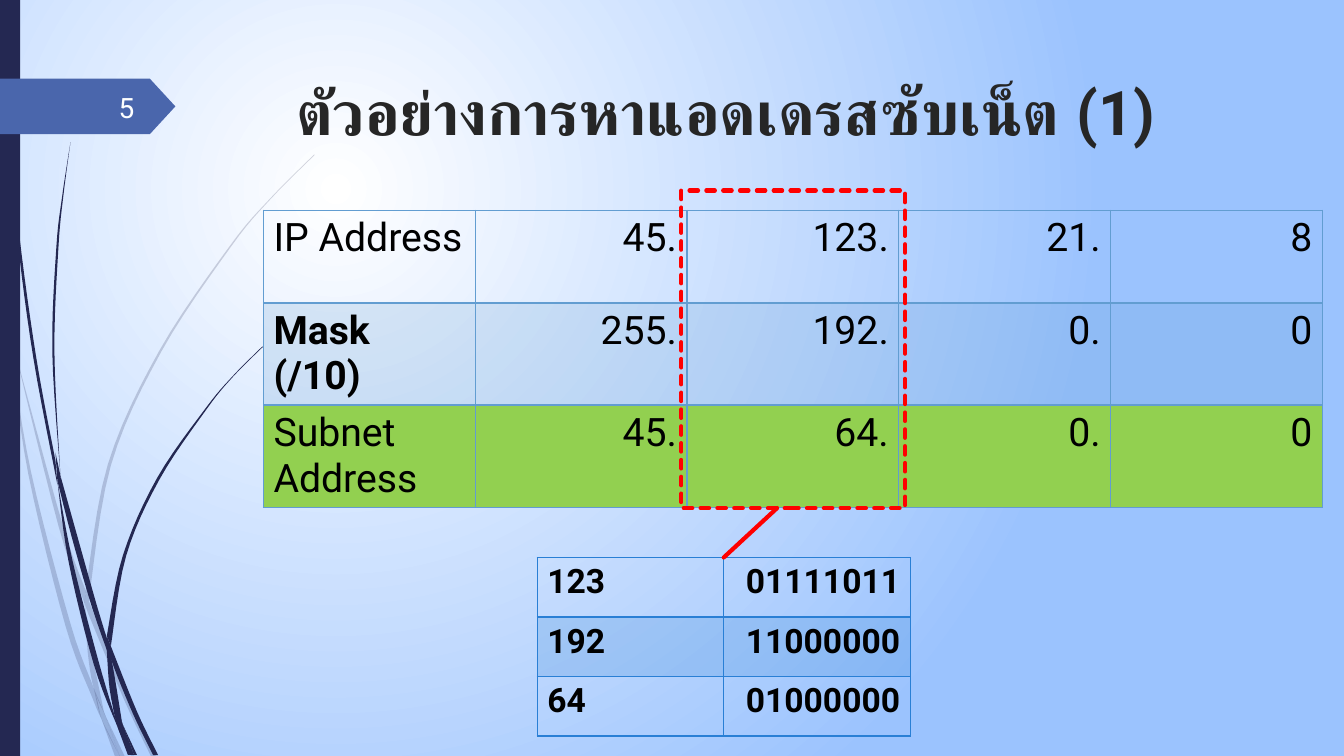
from lxml import etree
from pptx import Presentation
from pptx.dml.color import RGBColor
from pptx.enum.dml import MSO_LINE
from pptx.enum.shapes import MSO_CONNECTOR, MSO_SHAPE
from pptx.enum.text import MSO_ANCHOR, PP_ALIGN
from pptx.oxml.ns import qn
from pptx.util import Pt

RECTANGLE, PENTAGON = MSO_SHAPE.RECTANGLE, MSO_SHAPE.PENTAGON
STRAIGHT, SHORT_DASH = MSO_CONNECTOR.STRAIGHT, MSO_LINE.SQUARE_DOT
LEFT, RIGHT = PP_ALIGN.LEFT, PP_ALIGN.RIGHT
TOP, MIDDLE = MSO_ANCHOR.TOP, MSO_ANCHOR.MIDDLE

FONT = "Roboto"
WHITE = RGBColor(0xFF, 0xFF, 0xFF)
SKY = RGBColor(0x9B, 0xC3, 0xFE)
NAVY = RGBColor(0x24, 0x28, 0x52)
TAG_BLUE = RGBColor(0x4A, 0x66, 0xAC)
TITLE_GREY = RGBColor(0x26, 0x26, 0x26)
NUMBER_WHITE = RGBColor(0xFE, 0xFF, 0xFF)
BLACK = RGBColor(0x00, 0x00, 0x00)
LIGHT_BLUE = RGBColor(0x62, 0x9D, 0xD1)
MID_BLUE = RGBColor(0x29, 0x7F, 0xD5)
GREEN = RGBColor(0x92, 0xD0, 0x50)
RED = RGBColor(0xFF, 0x00, 0x00)


def paint(fill, holder, color, opacity):
    fill.solid()
    fill.fore_color.rgb = color
    if opacity < 100:
        tone = holder.find(qn("a:solidFill"))[0]
        etree.SubElement(tone, qn("a:alpha")).set("val", str(opacity * 1000))


def smooth(points, steps=6):
    padded = [points[0], *points, points[-1]]
    curve = []
    for a, b, c, d in zip(padded, padded[1:], padded[2:], padded[3:]):
        for step in range(steps):
            t = step / steps
            curve.append(tuple(
                Pt(q + t * (r - p) / 2 + t**2 * (2 * p - 5 * q + 4 * r - s) / 2
                   + t**3 * (3 * q - p - 3 * r + s) / 2)
                for p, q, r, s in zip(a, b, c, d)))
    return curve + [(Pt(points[-1][0]), Pt(points[-1][1]))]


deck = Presentation()
deck.slide_width, deck.slide_height = Pt(960), Pt(540)
page = deck.slides.add_slide(deck.slide_layouts[6])
shapes = page.shapes

backdrop = page.background.fill
backdrop.gradient()
for stop, color, position in zip(backdrop.gradient_stops, (WHITE, SKY), (0, 1)):
    stop.color.rgb = color
    stop.position = position
gradient = page.background._cSld.find(".//" + qn("a:gradFill"))
gradient.remove(gradient.find(qn("a:lin")))
glow = etree.Element(qn("a:path"), path="circle")
etree.SubElement(glow, qn("a:fillToRect"), l="50000", t="50000", r="100000", b="100000")
gradient.find(qn("a:gsLst")).addnext(glow)

PALE_BLADES = [
    ([(7.9, 252), (6.5, 231.8), (0, 203)], [(0, 215.3), (7.9, 252)]),
    ([(10.1, 248.4), (41.8, 375.8), (60.5, 431.3)],
     [(61.2, 421.9), (44.6, 374.4), (10.1, 248.4)]),
    ([(63.4, 439.2), (88.6, 499.7), (107.7, 540)],
     [(111.3, 540), (91.4, 498.2), (63.4, 429.1)]),
    ([(85.4, 540), (75.6, 511.9)], [(89, 540)]),
    ([(7.9, 252), (20.2, 338.4), (46.8, 447.1), (66.2, 499), (72.7, 514.1)],
     [(71.3, 509), (67, 491.8), (50.4, 445.7), (22.3, 337.7), (7.9, 252)]),
    ([(60.5, 431.3), (62.6, 465.1), (67, 491.8), (75.6, 511.9)],
     [(74.2, 508.3), (65.5, 465.1), (60.5, 431.3)]),
    ([(224.6, 110.2), (193, 141.8), (164.2, 175.7), (113.8, 250.6), (77, 331.9), (61.2, 421.9)],
     [(63.4, 429.1), (79.2, 332.6), (115.2, 251.3), (164.9, 176.4), (193, 142.6),
      (224.6, 110.9)]),
    ([(72.7, 514.1), (82, 540)], [(85.4, 540), (72.7, 514.1)]),
    ([(63.4, 439.2), (63.4, 429.1)], [(61.2, 421.9), (60.5, 431.3)]),
    ([(67, 491.8), (72.7, 514.1), (85.4, 540)], [(75.6, 511.9), (67, 491.8)]),
]
DARK_BLADES = [
    ([(2.2, 0), (2.9, 34.6), (5, 79.2), (12.2, 167.8), (23.8, 255.6), (41, 346.3)],
     [(39.6, 329), (25.9, 255.6), (13.7, 167), (5.8, 78.5), (3.6, 34.6), (2.9, 0)]),
    ([(43.2, 339.8), (46.1, 363.6), (63.4, 426.2), (76.3, 464.4)],
     [(76.3, 455.8), (67, 424.8), (43.2, 339.8)]),
    ([(79.2, 461.5), (79.9, 472.3), (95, 509.8), (109.4, 539.3)],
     [(113, 539.3), (97.9, 508.3), (79.2, 461.5)]),
    ([(41, 343.4), (49, 401), (67, 474.5), (84.2, 519.8)],
     [(83.5, 516.2), (70.6, 473), (51.8, 400.3), (41, 343.4)]),
    ([(50.4, 101.5), (44.6, 139), (40.3, 176.4), (37.4, 251.3), (43.2, 339.8)],
     [(43.2, 339.8), (38.9, 251.3), (41.8, 176.4), (45.4, 139), (50.4, 101.5)]),
    ([(95.8, 539.3), (87.8, 517.7)], [(97.9, 539.3)]),
    ([(41, 343.4), (46.1, 363.6)], [(43.2, 339.8), (39.6, 323.3)]),
    ([(187.2, 247.7), (166.3, 268.6), (146.9, 291.6), (112.3, 341.3), (87.8, 396.7),
      (76.3, 454.3)],
     [(79.2, 461.5), (90, 397.4), (113.8, 342.7), (147.6, 292.3), (166.3, 269.3),
      (187.9, 247.7)]),
    ([(84.2, 519.8), (91.4, 539.3)], [(94.3, 539.3), (84.2, 519.8)]),
    ([(76.3, 464.4), (79.2, 497.5), (87.8, 517.7)],
     [(87.1, 515.5), (79.9, 472.3), (76.3, 464.4)]),
    ([(76.3, 464.4), (79.9, 472.3)], [(79.2, 461.5), (76.3, 454.3)]),
    ([(79.2, 497.5), (84.2, 519.8), (93.6, 539.3)],
     [(95.8, 539.3), (87.8, 517.7), (79.2, 497.5)]),
]
for blades, opacity in ((PALE_BLADES, 20), (DARK_BLADES, 100)):
    for near_edge, far_edge in blades:
        outline = smooth(near_edge) + smooth(far_edge)
        builder = shapes.build_freeform(*outline[0], scale=1.0)
        builder.add_line_segments(outline[1:], close=True)
        blade = builder.convert_to_shape()
        blade.shadow.inherit = False
        paint(blade.fill, blade._element.spPr, NAVY, opacity)
        blade.line.fill.background()

for kind, color, top, width, height in [
    (RECTANGLE, NAVY, 0, 14.4, 540),
    (PENTAGON, TAG_BLUE, 56.2, 125.3, 39.6),
]:
    band = shapes.add_shape(kind, Pt(0), Pt(top), Pt(width), Pt(height))
    band.shadow.inherit = False
    paint(band.fill, band._element.spPr, color, 100)
    band.line.fill.background()
    if kind == PENTAGON:
        band.adjustments[0] = 0.46

for text, frame, size, bold, color, align, anchor in [
    ("ตัวอย่างการหาแอดเดรสซับเน็ต (1)", (204.5, 49, 702, 100.8), 44, True,
     TITLE_GREY, LEFT, TOP),
    ("5", (41.8, 61.9, 61.2, 28.8), 20, False, NUMBER_WHITE, RIGHT, MIDDLE),
]:
    box = shapes.add_textbox(*map(Pt, frame))
    box.text_frame.word_wrap = True
    box.text_frame.vertical_anchor = anchor
    para = box.text_frame.paragraphs[0]
    para.alignment = align
    span = para.add_run()
    span.text = text
    span.font.name, span.font.size, span.font.bold = FONT, Pt(size), bold
    span.font.color.rgb = color

ADDRESSES = [
    ["IP Address", "45.", "123.", "21.", "8"],
    ["Mask (/10)", "255.", "192.", "0.", "0"],
    ["Subnet Address", "45.", "64.", "0.", "0"],
]
BITS = [["123", "01111011"], ["192", "11000000"], ["64", "01000000"]]
for rows, left, top, column_width, row_height, size, tint, last_fill, bold_labels in [
    (ADDRESSES, 188.2, 150.1, 151.3, 66.2, 28, LIGHT_BLUE, GREEN, ["Mask (/10)"]),
    (BITS, 383.8, 398.2, 133.2, 42.5, 24, MID_BLUE, None, sum(BITS, [])),
]:
    columns = len(rows[0])
    table = shapes.add_table(len(rows), columns, Pt(left), Pt(top),
                             Pt(column_width * columns), Pt(row_height * len(rows))).table
    table.first_row = table.horz_banding = False
    for column in table.columns:
        column.width = Pt(column_width)
    for r, row in enumerate(rows):
        table.rows[r].height = Pt(row_height)
        for c, text in enumerate(row):
            cell = table.cell(r, c)
            cell.margin_bottom = Pt(2.2)
            para = cell.text_frame.paragraphs[0]
            para.alignment = RIGHT if c else LEFT
            span = para.add_run()
            span.text = text
            span.font.name, span.font.size = FONT, Pt(size)
            span.font.bold = text in bold_labels
            span.font.color.rgb = BLACK
            properties = cell._tc.get_or_add_tcPr()
            if r == 1:
                paint(cell.fill, properties, tint, 20)
            elif r == 2 and last_fill:
                paint(cell.fill, properties, last_fill, 100)
            else:
                cell.fill.background()
            for place, side in enumerate(("lnL", "lnR", "lnT", "lnB")):
                weight = 2 if (r, side) == (0, "lnB") else 1
                border = etree.Element(qn("a:" + side), w=str(Pt(weight)))
                ink = etree.SubElement(border, qn("a:solidFill"))
                etree.SubElement(ink, qn("a:srgbClr"), val=str(tint))
                properties.insert(place, border)

highlight = shapes.add_shape(RECTANGLE, Pt(486.7), Pt(136.1), Pt(159.8), Pt(226.8))
highlight.shadow.inherit = False
highlight.fill.background()
highlight.line.dash_style = SHORT_DASH
pointer = shapes.add_connector(STRAIGHT, Pt(555.1), Pt(362.9), Pt(517), Pt(398.2))
etree.SubElement(pointer._element.spPr, qn("a:effectLst"))
for stroke in (highlight, pointer):
    stroke.line.color.rgb = RED
    stroke.line.width = Pt(3)
    stroke._element.spPr.find(qn("a:ln")).set("cap", "rnd")

deck.save("out.pptx")
